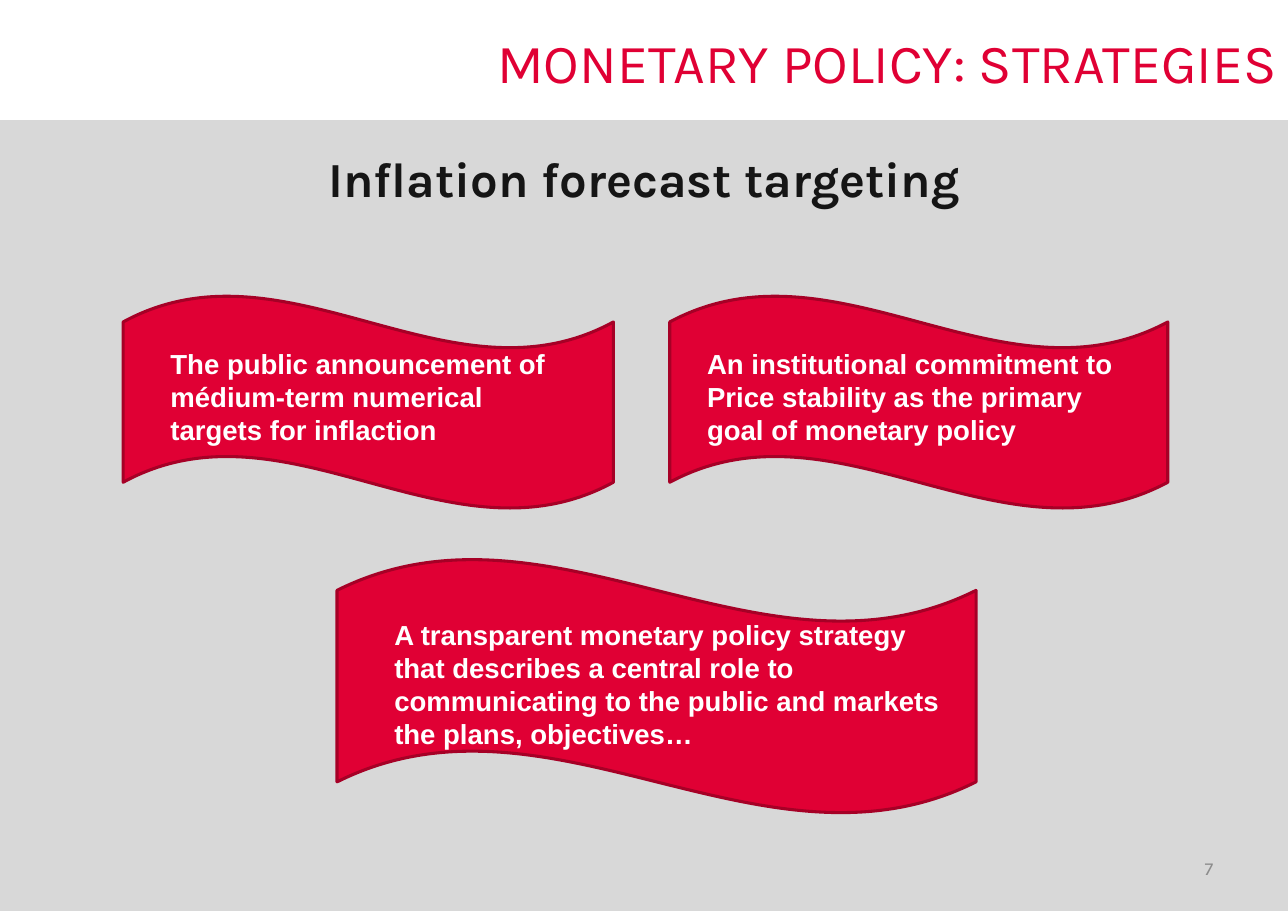
from dataclasses import dataclass

import pptx
import pptx.dml.color
import pptx.enum.shapes
import pptx.enum.text
import pptx.oxml.ns
import pptx.util
from lxml import etree

Cm = pptx.util.Cm
RGB = pptx.dml.color.RGBColor.from_string
SHAPE = pptx.enum.shapes.MSO_SHAPE
ALIGN = pptx.enum.text.PP_ALIGN
ANCHOR = pptx.enum.text.MSO_ANCHOR


@dataclass(frozen=True)
class Theme:
    red: str = "E00034"
    dark_red: str = "A60026"
    grey: str = "D8D8D8"
    ink: str = "151515"
    muted: str = "8C8C8C"
    white: str = "FFFFFF"
    heading_font: str = "Karla"
    banner_font: str = "Arial"
    title_size: int = 36
    subtitle_size: int = 32
    banner_size: int = 18
    number_size: int = 12


theme = Theme()


def write(sp, text, *, size, color, font=theme.heading_font, bold=False,
          align=ALIGN.LEFT, anchor=ANCHOR.TOP):
    tf = sp.text_frame
    tf.word_wrap = True
    tf.auto_size = pptx.enum.text.MSO_AUTO_SIZE.NONE
    tf.vertical_anchor = anchor
    p = tf.paragraphs[0]
    p.alignment = align
    p.space_before = pptx.util.Pt(0)
    r = p.add_run()
    r.text = text
    r.font.name = font
    r.font.size = pptx.util.Pt(size)
    r.font.bold = bold
    r.font.color.rgb = RGB(color)


def place(sp, left, top, width, height):
    sp.left, sp.top, sp.width, sp.height = map(Cm, (left, top, width, height))


prs = pptx.Presentation()
prs.slide_width, prs.slide_height = Cm(29.69), Cm(21.01)
s = prs.slides.add_slide(prs.slide_layouts[1])

# Grey content area, sent behind the placeholders
area = s.shapes.add_shape(SHAPE.RECTANGLE, 0, Cm(2.77), Cm(29.69), Cm(18.24))
area.shadow.inherit = False
area.fill.solid()
area.fill.fore_color.rgb = RGB(theme.grey)
area.line.fill.background()
area.element.getparent().insert(2, area.element)

# Title and subtitle
title = s.shapes.title
place(title, 7.59, 0.51, 22.1, 1.83)
write(title, "MONETARY POLICY: STRATEGIES", size=theme.title_size,
      color=theme.red, align=ALIGN.RIGHT, anchor=ANCHOR.MIDDLE)

body = s.placeholders[1]
place(body, 1.5, 3.3, 26.72, 15.47)
pPr = body.text_frame.paragraphs[0]._p.get_or_add_pPr()
pPr.set("marL", "0")
pPr.set("indent", "0")
etree.SubElement(pPr, pptx.oxml.ns.qn("a:buNone"))
write(body, "Inflation forecast targeting", size=theme.subtitle_size,
      color=theme.ink, bold=True, align=ALIGN.CENTER)

# Slide number
number = s.shapes.add_textbox(Cm(21.29), Cm(19.46), Cm(6.93), Cm(1.12))
write(number, "7", size=theme.number_size, color=theme.muted,
      align=ALIGN.RIGHT, anchor=ANCHOR.MIDDLE)

# Wave banners: wave box, text box, wording
banners = [
    ((2.84, 6.81, 11.3, 4.93), (3.68, 7.87, 9.93, 2.57),
     "The public announcement of médium-term numerical targets for inflaction"),
    ((15.44, 6.81, 11.48, 4.93), (16.05, 7.87, 10.31, 2.57),
     "An institutional commitment to Price stability as the primary goal "
     "of monetary policy"),
    ((7.77, 12.88, 14.73, 5.89), (8.84, 14.12, 13.21, 3.33),
     "A transparent monetary policy strategy that describes a central role to "
     "communicating to the public and markets the plans, objectives…"),
]
for wave_box, text_box, wording in banners:
    wave = s.shapes.add_shape(SHAPE.WAVE, *map(Cm, wave_box))
    wave.shadow.inherit = False
    wave.fill.solid()
    wave.fill.fore_color.rgb = RGB(theme.red)
    wave.line.color.rgb = RGB(theme.dark_red)
    wave.line.width = pptx.util.Pt(2)
    label = s.shapes.add_textbox(*map(Cm, text_box))
    write(label, wording, size=theme.banner_size, color=theme.white,
          font=theme.banner_font, bold=True)

prs.save("out.pptx")
